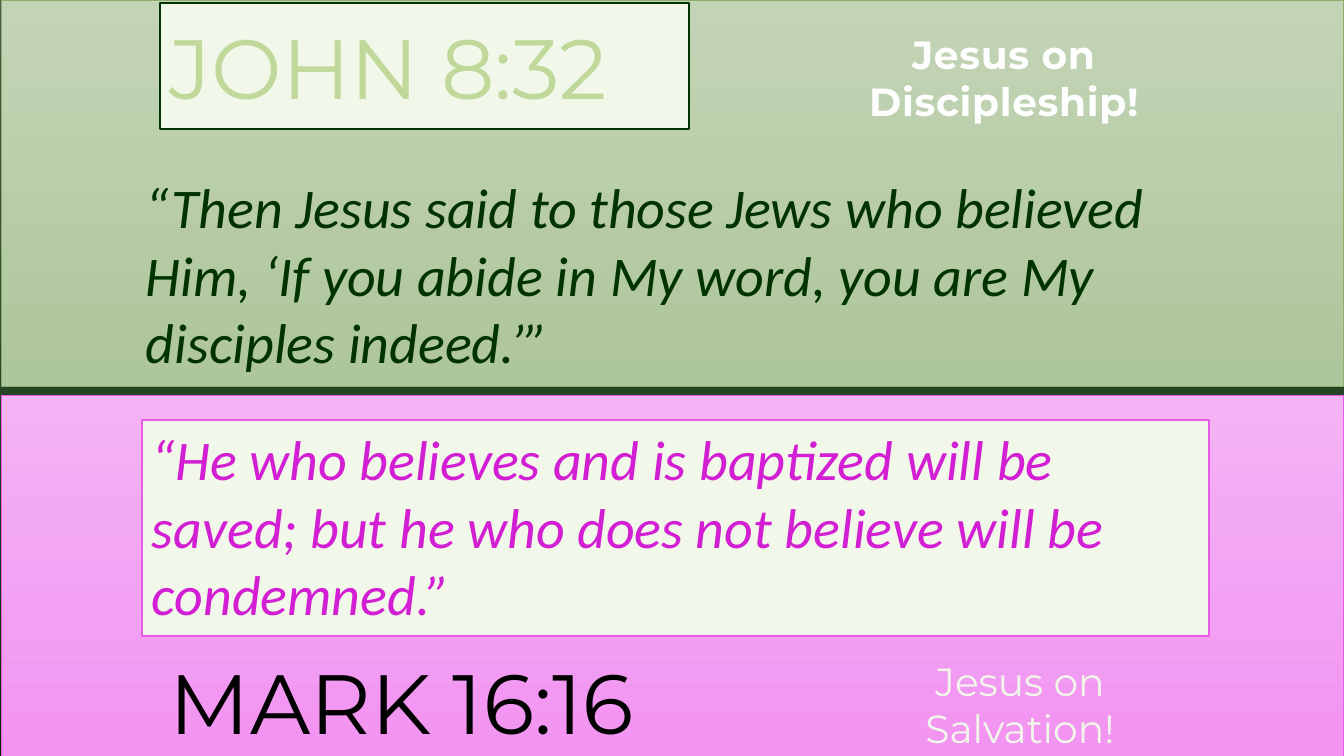
from dataclasses import dataclass
from lxml.etree import SubElement
from pptx import Presentation
from pptx.dml.color import RGBColor
from pptx.enum.shapes import MSO_SHAPE
from pptx.enum.text import MSO_ANCHOR, MSO_AUTO_SIZE, PP_ALIGN
from pptx.oxml.ns import qn
from pptx.util import Pt


@dataclass(frozen=True)
class Theme:
    back: tuple = ("4E5E4E", "002A00")
    green: tuple = ("C3D4B6", "AEC69B")
    pink: tuple = ("F4B3F4", "F294F2")
    leaf: str = "8BAE6C"
    rose: str = "E75CE7"
    cream: str = "F1F7E9"
    lime: str = "C0D899"
    dark: str = "003300"
    plum: str = "D31FD3"
    white: str = "FEFEFE"
    black: str = "000000"
    head: str = "Montserrat"
    body: str = "Calibri"
    title: int = 60
    verse: int = 40
    label: int = 28


T = Theme()
WIDE, HIGH = 1344, 756
SCALE = 12192000 / WIDE

title = dict(font=T.head, size=T.title, middle=True)
verse = dict(font=T.body, size=T.verse, italic=True, grow=True)
label = dict(font=T.head, size=T.label, center=True, grow=True)

PANELS = [
    ((1, 0, 1342, 386), T.green, T.leaf),
    ((1, 395, 1342, 361), T.pink, T.rose),
]
TEXTS = [
    ("JOHN 8:32", (160, 3, 529, 126),
     dict(title, color=T.lime, fill=T.cream, line=T.dark)),
    ("“Then Jesus said to those Jews who believed Him, ‘If you abide in My word, "
     "you are My disciples indeed.’”", (136, 168, 1074, 212),
     dict(verse, color=T.dark)),
    ("MARK 16:16", (160, 638, 857, 126), dict(title, color=T.black)),
    ("“He who believes and is baptized will be saved; but he who does not believe "
     "will be condemned.”", (142, 420, 1067, 216),
     dict(verse, color=T.plum, fill=T.cream, line=T.rose)),
    ("Jesus on Discipleship!", (849, 25, 310, 104),
     dict(label, color=T.white, bold=True, edge=T.leaf)),
    ("Jesus on Salvation!", (865, 652, 310, 104), dict(label, color=T.cream)),
]


def emu(box):
    return [round(n * SCALE) for n in box]


def rgb(code):
    return RGBColor.from_string(code)


def shade(fill, pair):
    fill.gradient()
    fill.gradient_angle = 270
    for stop, code, place in zip(fill.gradient_stops, pair, (0, 1)):
        stop.color.rgb = rgb(code)
        stop.position = place


def border(shape, code, width):
    shape.line.color.rgb = rgb(code)
    shape.line.width = Pt(width)


def outline(run, code):
    props = run._r.get_or_add_rPr()
    props.set("spc", "50")
    line = SubElement(props, qn("a:ln"), w=str(Pt(0.75)))
    paint = SubElement(line, qn("a:solidFill"))
    SubElement(paint, qn("a:srgbClr"), val=code)
    props.insert(0, line)


def write(slide, text, box, *, font, size, color, bold=False, italic=False,
          center=False, middle=False, grow=False, fill=None, line=None, edge=None):
    shape = slide.shapes.add_textbox(*emu(box))
    if fill:
        shape.fill.solid()
        shape.fill.fore_color.rgb = rgb(fill)
    if line:
        border(shape, line, 1)
    frame = shape.text_frame
    frame.word_wrap = True
    frame.auto_size = MSO_AUTO_SIZE.SHAPE_TO_FIT_TEXT if grow else MSO_AUTO_SIZE.NONE
    frame.vertical_anchor = MSO_ANCHOR.MIDDLE if middle else MSO_ANCHOR.TOP
    para = frame.paragraphs[0]
    para.alignment = PP_ALIGN.CENTER if center else PP_ALIGN.LEFT
    run = para.add_run()
    run.text = text
    run.font.name = font
    run.font.size = Pt(size)
    run.font.bold = bold
    run.font.italic = italic
    run.font.color.rgb = rgb(color)
    if edge:
        outline(run, edge)


def main():
    deck = Presentation()
    deck.slide_width, deck.slide_height = emu((WIDE, HIGH))
    slide = deck.slides.add_slide(deck.slide_layouts[6])
    shade(slide.background.fill, T.back)
    for box, pair, line in PANELS:
        panel = slide.shapes.add_shape(MSO_SHAPE.RECTANGLE, *emu(box))
        panel.shadow.inherit = False
        shade(panel.fill, pair)
        border(panel, line, 0.5)
    for text, box, style in TEXTS:
        write(slide, text, box, **style)
    deck.save("out.pptx")


if __name__ == "__main__":
    main()
